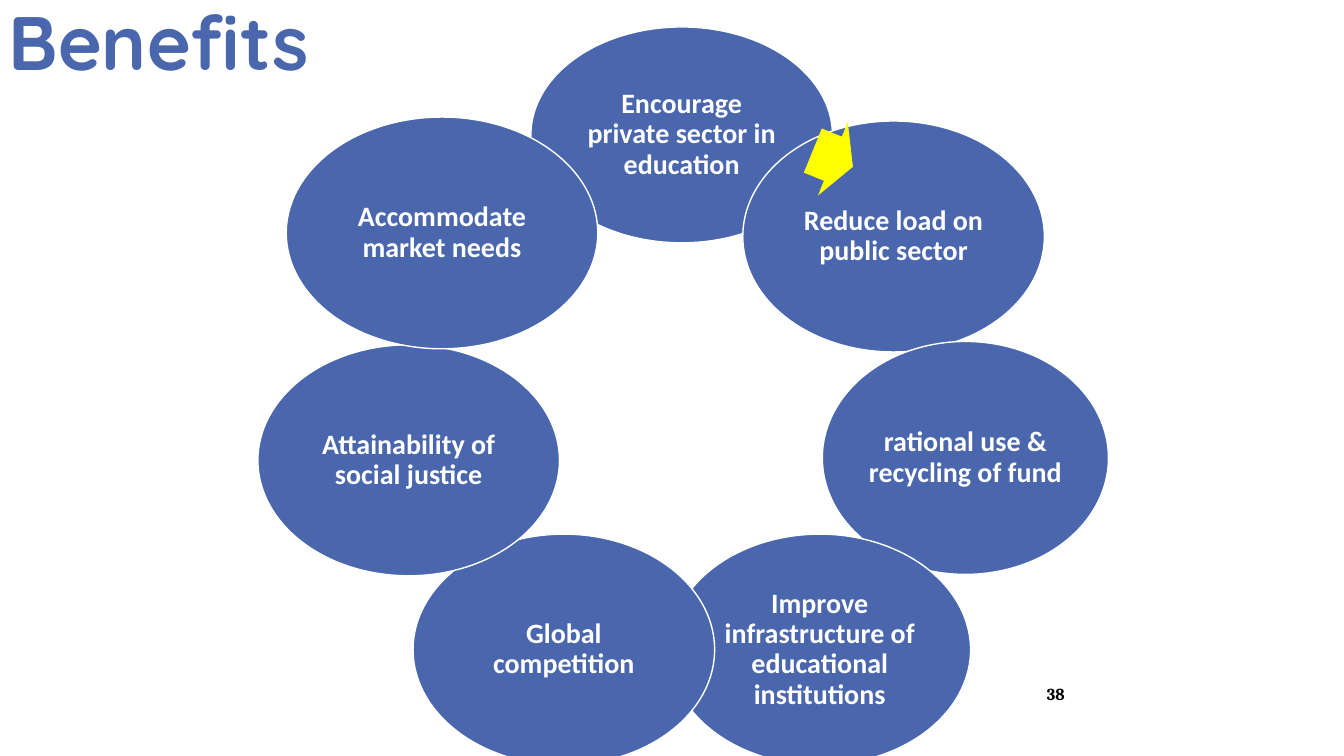
from pptx import Presentation
from pptx import util as u
from pptx.dml import color
from pptx.enum import shapes, text

BLUE, WHITE, BLACK, YELLOW = "4A66AC", "FFFFFF", "000000", "FFFF00"
WIDE, HIGH = 7.6, 5.82  # usual oval size

# Label, centre within the ring, size
OVALS = [
    ("Encourage private sector in education", 10.68, 2.7, WIDE, 5.44),
    ("Reduce load on public sector", 16.02, 5.26, WIDE, HIGH),
    ("rational use & recycling of fund", 17.83, 10.84, 7.21, 5.87),
    ("Improve infrastructure of educational institutions", 14.16, 15.67, WIDE, HIGH),
    ("Global competition", 7.71, 15.67, WIDE, HIGH),
    ("Attainability of social justice", 3.8, 10.9, WIDE, HIGH),
    ("Accommodate market needs", 4.64, 5.17, 7.85, 5.84),
]


def rgb(code):
    return color.RGBColor.from_string(code)


def put(frame, words, font, hue, **form):
    """Write one paragraph and apply its format."""
    frame.word_wrap = True
    line = frame.paragraphs[0]
    line.text = words
    for key, value in form.items():
        setattr(line, key, value)
    looks = {"name": font[0], "size": u.Pt(font[1]), "bold": True}
    for key, value in looks.items():
        setattr(line.font, key, value)
    line.font.color.rgb = rgb(hue)


def label(slide, box, words, font, hue, anchor, **form):
    frame = slide.shapes.add_textbox(*map(u.Cm, box)).text_frame
    frame.vertical_anchor = anchor
    put(frame, words, font, hue, **form)


def solid(slide, kind, mid, size, hue):
    """Add a filled shape around its centre."""
    (x, y), (w, h) = mid, size
    part = slide.shapes.add_shape(
        kind, u.Cm(x - w / 2), u.Cm(y - h / 2), u.Cm(w), u.Cm(h))
    part.shadow.inherit = False
    part.fill.solid()
    part.fill.fore_color.rgb = rgb(hue)
    return part


def ring(slide, left, top):
    # Overlapping ovals, back to front
    for words, x, y, w, h in OVALS:
        oval = solid(slide, shapes.MSO_SHAPE.OVAL, (left + x, top + y), (w, h), BLUE)
        oval.line.color.rgb = rgb(WHITE)
        oval.line.width = u.Pt(1)
        frame = oval.text_frame
        for side in ("left", "right", "top", "bottom"):
            setattr(frame, "margin_" + side, u.Cm(0.08))
        frame.vertical_anchor = text.MSO_ANCHOR.MIDDLE
        put(frame, words, ("Calibri", 20), WHITE,
            alignment=text.PP_ALIGN.CENTER, line_spacing=0.9)

    # Arrow from the first oval to the second
    arrow = solid(slide, shapes.MSO_SHAPE.RIGHT_ARROW,
                  (left + 14.49, top + 3.3), (1.09, 2), YELLOW)
    arrow.line.fill.background()
    arrow.adjustments[0] = 0.6
    arrow.rotation = 22.1


def main():
    deck = Presentation()
    deck.slide_width, deck.slide_height = u.Cm(33.87), u.Cm(19.05)
    slide = deck.slides.add_slide(deck.slide_layouts[6])

    # Page number, title and ring
    label(slide, (23.7, 17.1, 3.38, 0.76), "38", ("Cambria", 12), BLACK,
          text.MSO_ANCHOR.MIDDLE, alignment=text.PP_ALIGN.RIGHT)
    label(slide, (-0.03, -0.69, 24.13, 2.97), "Benefits", ("Quicksand", 54), BLUE,
          text.MSO_ANCHOR.BOTTOM, alignment=text.PP_ALIGN.LEFT, line_spacing=0.8)
    ring(slide, 6.5, 0.7)
    deck.save("out.pptx")


if __name__ == "__main__":
    main()
